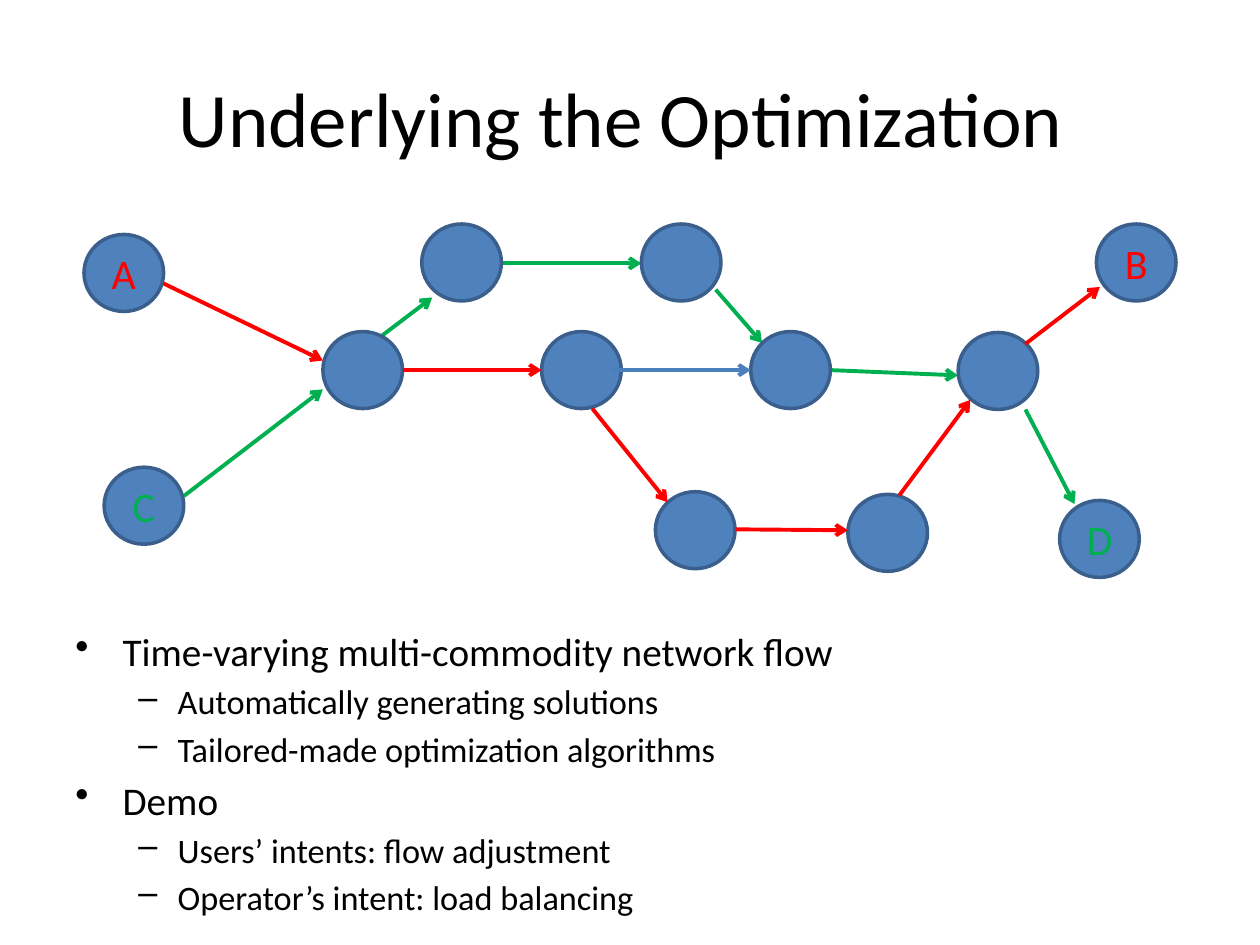
from typing import NamedTuple

from lxml.etree import SubElement
from pptx import Presentation
from pptx.dml.color import RGBColor
from pptx.enum.shapes import MSO_CONNECTOR, MSO_SHAPE
from pptx.enum.text import MSO_ANCHOR, PP_ALIGN
from pptx.oxml.ns import qn
from pptx.shapes.shapetree import SlideShapes
from pptx.text.text import TextFrame
from pptx.util import Pt

BLACK = RGBColor(0x00, 0x00, 0x00)
RED = RGBColor(0xFF, 0x00, 0x00)
GREEN = RGBColor(0x00, 0xB0, 0x50)
LINK_BLUE = RGBColor(0x4B, 0x7E, 0xBC)
NODE_FILL = RGBColor(0x4F, 0x81, 0xBD)
NODE_LINE = RGBColor(0x3A, 0x5F, 0x8C)
FONT = "Calibri"
NODE_WIDTH, NODE_HEIGHT = 45.5, 44


class Node(NamedTuple):
    left: float
    top: float
    label: str = ""
    color: RGBColor = BLACK


class Link(NamedTuple):
    start: tuple[float, float]
    end: tuple[float, float]
    color: RGBColor


class Level(NamedTuple):
    bullet: str
    size: float
    margin: float
    hanging: float
    space_before: float


TOPIC = Level("•", 22.4, 27, 27, 4)
DETAIL = Level("–", 19.6, 58.5, 22.5, 3.5)

OUTLINE = [
    (TOPIC, "Time-varying multi-commodity network flow"),
    (DETAIL, "Automatically generating solutions"),
    (DETAIL, "Tailored-made optimization algorithms"),
    (TOPIC, "Demo"),
    (DETAIL, "Users’ intents: flow adjustment"),
    (DETAIL, "Operator’s intent: load balancing"),
]

NODES = [
    Node(48, 134, "A", RED),
    Node(626.5, 128, "B", RED),
    Node(59.5, 267, "C", GREEN),
    Node(605.5, 286, "D", GREEN),
    Node(184.5, 189.5),
    Node(309.5, 189.5),
    Node(429, 189.5),
    Node(547.5, 190),
    Node(241, 128),
    Node(366.5, 128),
    Node(374.5, 281),
    Node(484.5, 282.5),
]

LINKS_BEHIND = [
    Link((105, 283.5), (184.5, 222.5), GREEN),
    Link((286.5, 150.5), (366.5, 150.5), GREEN),
    Link((207.5, 200), (247, 170), GREEN),
    Link((409, 165.5), (435.5, 196), GREEN),
    Link((474.5, 211.5), (547.5, 214.5), GREEN),
    Link((586, 234), (614, 288), GREEN),
]

LINKS_IN_FRONT = [
    Link((93.5, 162), (184.5, 206), RED),
    Link((230.5, 211.5), (309.5, 211.5), RED),
    Link((338.5, 233.5), (381.5, 287), RED),
    Link((420.5, 302.5), (484.5, 303), RED),
    Link((514, 283), (554.5, 228.5), RED),
    Link((586, 196.5), (628.5, 164), RED),
    Link((349, 211.5), (429, 211.5), LINK_BLUE),
]


def add_text_frame(
    shapes: SlideShapes, left: float, top: float, width: float, height: float
) -> TextFrame:
    text_frame = shapes.add_textbox(Pt(left), Pt(top), Pt(width), Pt(height)).text_frame
    text_frame.word_wrap = True
    return text_frame


def write_paragraph(paragraph, text: str, size: float, color: RGBColor) -> None:
    paragraph.text = text
    paragraph.font.name = FONT
    paragraph.font.size = Pt(size)
    paragraph.font.color.rgb = color


def add_title(shapes: SlideShapes, text: str) -> None:
    text_frame = add_text_frame(shapes, 36, 21.5, 648, 90)
    text_frame.vertical_anchor = MSO_ANCHOR.MIDDLE
    paragraph = text_frame.paragraphs[0]
    write_paragraph(paragraph, text, 44, BLACK)
    paragraph.alignment = PP_ALIGN.CENTER


def add_outline(shapes: SlideShapes) -> None:
    text_frame = add_text_frame(shapes, 36, 355, 648, 153.5)
    for index, (level, text) in enumerate(OUTLINE):
        paragraph = text_frame.add_paragraph() if index else text_frame.paragraphs[0]
        write_paragraph(paragraph, text, level.size, BLACK)
        paragraph.space_before = Pt(level.space_before)
        properties = paragraph._p.get_or_add_pPr()
        properties.set("marL", str(Pt(level.margin)))
        properties.set("indent", str(-Pt(level.hanging)))
        bullet = properties.makeelement(qn("a:buChar"), {"char": level.bullet})
        properties.insert_element_before(bullet, "a:tabLst", "a:defRPr", "a:extLst")


def add_node(shapes: SlideShapes, node: Node) -> None:
    shape = shapes.add_shape(
        MSO_SHAPE.OVAL, Pt(node.left), Pt(node.top), Pt(NODE_WIDTH), Pt(NODE_HEIGHT)
    )
    shape.shadow.inherit = False
    shape.fill.solid()
    shape.fill.fore_color.rgb = NODE_FILL
    shape.line.color.rgb = NODE_LINE
    shape.line.width = Pt(2)
    if node.label:
        shape.text_frame.vertical_anchor = MSO_ANCHOR.MIDDLE
        paragraph = shape.text_frame.paragraphs[0]
        write_paragraph(paragraph, node.label, 24, node.color)
        paragraph.alignment = PP_ALIGN.CENTER


def add_link(shapes: SlideShapes, link: Link) -> None:
    connector = shapes.add_connector(
        MSO_CONNECTOR.STRAIGHT, *(Pt(value) for value in link.start + link.end)
    )
    connector.line.color.rgb = link.color
    connector.line.width = Pt(2.25)
    SubElement(connector.line._get_or_add_ln(), qn("a:tailEnd"), type="arrow")
    SubElement(connector._element.spPr, qn("a:effectLst"))


def main() -> None:
    presentation = Presentation()
    presentation.slide_width = Pt(720)
    presentation.slide_height = Pt(540)
    slide = presentation.slides.add_slide(presentation.slide_layouts[6])
    add_title(slide.shapes, "Underlying the Optimization ")
    add_outline(slide.shapes)
    for link in LINKS_BEHIND:
        add_link(slide.shapes, link)
    for node in NODES:
        add_node(slide.shapes, node)
    for link in LINKS_IN_FRONT:
        add_link(slide.shapes, link)
    presentation.save("out.pptx")


if __name__ == "__main__":
    main()
